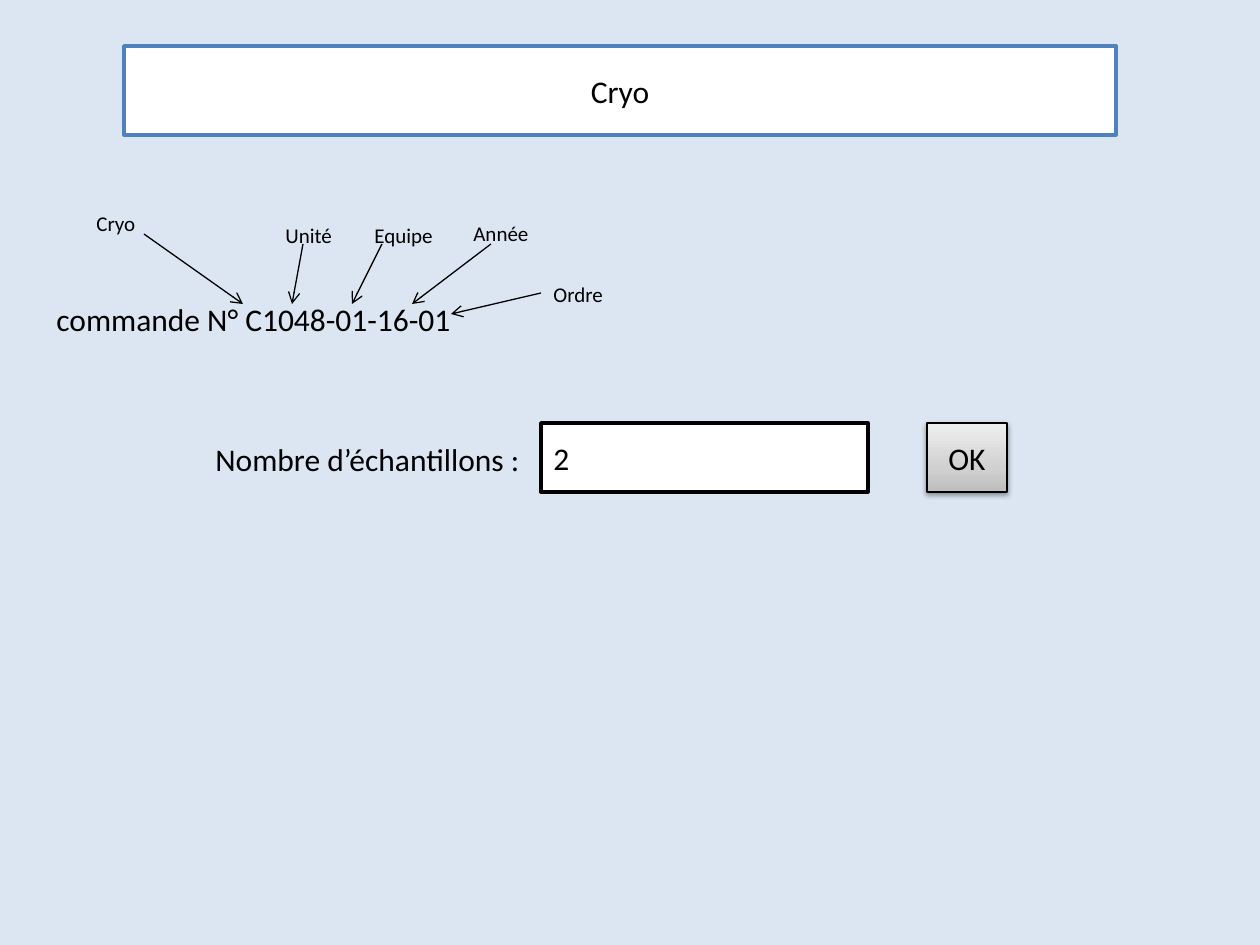
from pptx import Presentation, util as u
from pptx.dml.color import RGBColor
from pptx.enum import shapes, text
from pptx.oxml import parse_xml
from pptx.oxml.ns import nsdecls, qn

BLACK = RGBColor(0x00, 0x00, 0x00)
WHITE = RGBColor(0xFF, 0xFF, 0xFF)
BLUE = RGBColor(0x4F, 0x81, 0xBD)
BACKGROUND = RGBColor(0xDC, 0xE6, 0xF2)
GREYS = [(0, RGBColor(0xBD, 0xBD, 0xBD)), (35, RGBColor(0xD1, 0xD1, 0xD1)),
         (100, RGBColor(0xEE, 0xEE, 0xEE))]
FONT = "Calibri"
LEFT, CENTER = text.PP_ALIGN.LEFT, text.PP_ALIGN.CENTER

# text, (left, top, width, height), line colour, line width in points, alignment
TITLE = ("Cryo", (124, 46, 992, 89), BLUE, 2, CENTER)
SAMPLE_FIELD = ("2", (541, 423, 327, 69), BLACK, 2, LEFT)
OK_BUTTON = ("OK", (927, 423, 80, 69), BLACK, 0.75, CENTER)

# text, (left, top, width, height)
PROMPTS = [
    ("Nombre d’échantillons :", (203, 434, 357, 50)),
    ("commande N° C1048-01-16-01", (44, 294, 496, 50)),
]

# label, label left and top, arrow start, arrow end
CODE_PARTS = [
    ("Cryo", (84, 204), (144, 234), (243, 304)),
    ("Unité", (273, 216), (303, 244), (292, 304)),
    ("Equipe", (362, 216), (382, 244), (352, 304)),
    ("Année", (461, 214), (491, 244), (412, 304)),
    ("Ordre", (541, 275), (541, 293), (451, 314)),
]
LABEL_SIZE = (118, 38)


def px(n):
    return round(n * u.Inches(1) / 126)


def write(sp, words, size, align=LEFT):
    tf = sp.text_frame
    tf.word_wrap = True
    tf.text = words
    p = tf.paragraphs[0]
    p.alignment = align
    font = p.runs[0].font
    font.name, font.size = FONT, u.Pt(size)
    font.color.rgb = BLACK
    return tf


def add_label(s, words, box, size):
    sp = s.shapes.add_textbox(*map(px, box))
    write(sp, words, size)


def add_box(s, words, box, line, width, align):
    sp = s.shapes.add_shape(shapes.MSO_SHAPE.RECTANGLE, *map(px, box))
    sp.shadow.inherit = False
    sp.fill.solid()
    sp.fill.fore_color.rgb = WHITE
    sp.line.color.rgb = line
    sp.line.width = u.Pt(width)
    tf = write(sp, words, 18, align)
    tf.vertical_anchor = text.MSO_ANCHOR.MIDDLE
    return sp


def make_raised(sp):
    """Give a box a grey gradient and a soft shadow below."""
    spPr = sp._element.spPr
    stops = "".join(f'<a:gs pos="{pos * 1000}"><a:srgbClr val="{color}"/></a:gs>'
                    for pos, color in GREYS)
    gradient = parse_xml(f'<a:gradFill {nsdecls("a")} rotWithShape="1"><a:gsLst>{stops}</a:gsLst>'
                         '<a:lin ang="16200000" scaled="0"/></a:gradFill>')
    spPr.replace(spPr.find(qn("a:solidFill")), gradient)
    spPr.find(qn("a:effectLst")).append(parse_xml(
        f'<a:outerShdw {nsdecls("a")} blurRad="{u.Pt(3.1)}" dist="{u.Pt(1.6)}" dir="5400000" '
        f'rotWithShape="0"><a:srgbClr val="{BLACK}"><a:alpha val="38000"/></a:srgbClr></a:outerShdw>'))


def add_arrow(s, start, end):
    line = s.shapes.add_connector(shapes.MSO_CONNECTOR.STRAIGHT, *map(px, start + end))
    line.line.color.rgb = BLACK
    line.line.width = u.Pt(0.75)
    line.line._get_or_add_ln().append(parse_xml(f'<a:tailEnd {nsdecls("a")} type="arrow"/>'))
    line._element.spPr.append(parse_xml(f'<a:effectLst {nsdecls("a")}/>'))


prs = Presentation()
prs.slide_width, prs.slide_height = px(1260), px(945)
s = prs.slides.add_slide(prs.slide_layouts[6])
s.background.fill.solid()
s.background.fill.fore_color.rgb = BACKGROUND

# Title, order number and sample form
for words, box in PROMPTS:
    add_label(s, words, box, 18)
add_box(s, *TITLE)
add_box(s, *SAMPLE_FIELD)
make_raised(add_box(s, *OK_BUTTON))

# Labels explaining each part of the order number
for words, corner, start, end in CODE_PARTS:
    add_label(s, words, corner + LABEL_SIZE, 12)
    add_arrow(s, start, end)

prs.save("out.pptx")
